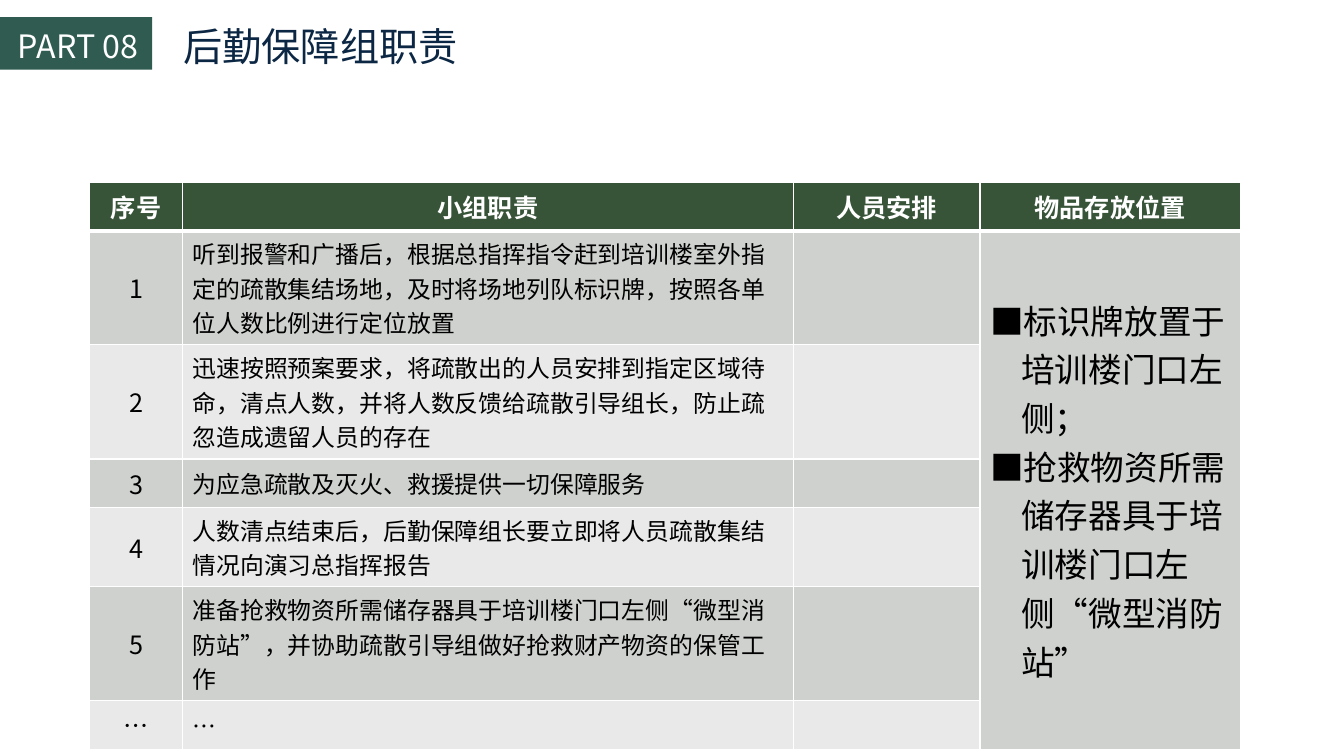
from lxml import etree
from pptx import Presentation
from pptx import util as u
from pptx.dml.color import RGBColor
from pptx.enum import shapes, text
from pptx.oxml.ns import qn

# Content
TITLE = "后勤保障组职责"
PART = "PART 08"
HEADERS = ["序号", "小组职责", "人员安排", "物品存放位置"]
DUTIES = [
    ("1", "听到报警和广播后，根据总指挥指令赶到培训楼室外指定的疏散集结场地，"
          "及时将场地列队标识牌，按照各单位人数比例进行定位放置"),
    ("2", "迅速按照预案要求，将疏散出的人员安排到指定区域待命，清点人数，"
          "并将人数反馈给疏散引导组长，防止疏忽造成遗留人员的存在"),
    ("3", "为应急疏散及灭火、救援提供一切保障服务"),
    ("4", "人数清点结束后，后勤保障组长要立即将人员疏散集结情况向演习总指挥报告"),
    ("5", "准备抢救物资所需储存器具于培训楼门口左侧“微型消防站”，"
          "并协助疏散引导组做好抢救财产物资的保管工作"),
    ("…", "…"),
]
STORAGE = ["标识牌放置于培训楼门口左侧；", "抢救物资所需储存器具于培训楼门口左侧“微型消防站”"]

# Theme and layout
THEME = {
    "font": "Noto Sans CJK SC",
    "white": "FFFFFF", "black": "000000", "navy": "0C2744", "tag": "2F5B50",
    "header": "375439", "bands": ("CED1CE", "E8E9E8"),
    "title_size": 28, "part_size": 23, "label_size": 18, "duty_size": 17, "storage_size": 24,
}
COLUMNS = [0.92, 6.06, 1.85, 2.58]
ROW_HEIGHT = 0.48
TABLE_LEFT, TABLE_TOP = 0.89, 1.81
INDENT = 0.31
THIN, THICK = 1, 3
CENTER, LEFT = text.PP_ALIGN.CENTER, text.PP_ALIGN.LEFT


def color(name):
    return RGBColor.from_string(THEME.get(name, name))


def inches(*values):
    return [u.Inches(value) for value in values]


def write(para, words, size, ink, align=LEFT, bold=False):
    para.alignment = align
    span = para.add_run()
    span.text = words
    settings = {"size": u.Pt(THEME[size]), "name": THEME["font"], "bold": bold}
    for key, value in settings.items():
        setattr(span.font, key, value)
    span.font.color.rgb = color(ink)
    props = span.font._element
    props.set("lang", "zh-CN")
    east_asian = etree.Element(qn("a:ea"), typeface=THEME["font"])
    props.find(qn("a:latin")).addnext(east_asian)


def write_line(box, words, size, ink):
    settings = {"word_wrap": False, "auto_size": text.MSO_AUTO_SIZE.NONE,
                "vertical_anchor": text.MSO_ANCHOR.MIDDLE}
    for key, value in settings.items():
        setattr(box.text_frame, key, value)
    write(box.text_frame.paragraphs[0], words, size, ink)


def add_bullet(para):
    props = para._p.get_or_add_pPr()
    props.set("marL", str(u.Inches(INDENT)))
    props.set("indent", str(-u.Inches(INDENT)))
    etree.SubElement(props, qn("a:buFont"), typeface=THEME["font"])
    etree.SubElement(props, qn("a:buChar"), char="■")


def style_cell(cell, fill, top, bottom):
    props = cell._tc.get_or_add_tcPr()
    for side, width in {"L": THIN, "R": THIN, "T": top, "B": bottom}.items():
        line = etree.SubElement(props, qn("a:ln" + side), w=str(u.Pt(width)))
        paint = etree.SubElement(line, qn("a:solidFill"))
        etree.SubElement(paint, qn("a:srgbClr"), val=THEME["white"])
    cell.fill.solid()
    cell.fill.fore_color.rgb = color(fill)
    cell.vertical_anchor = text.MSO_ANCHOR.MIDDLE


def add_duty_table(page):
    row_count = len(DUTIES) + 1
    frame = page.shapes.add_table(row_count, len(COLUMNS), *inches(
        TABLE_LEFT, TABLE_TOP, sum(COLUMNS), ROW_HEIGHT * row_count))
    table = frame.table
    for column, width in zip(table.columns, COLUMNS):
        column.width = u.Inches(width)

    # Fills and borders: header, then alternating bands
    for index, row in enumerate(table.rows):
        row.height = u.Inches(ROW_HEIGHT)
        fill = THEME["bands"][(index - 1) % 2] if index else "header"
        for cell in row.cells:
            style_cell(cell, fill, THICK if index == 1 else THIN, THICK if index == 0 else THIN)

    # Header and duties
    for cell, words in zip(table.rows[0].cells, HEADERS):
        write(cell.text_frame.paragraphs[0], words, "label_size", "white", CENTER, True)
    for index, (number, duty) in enumerate(DUTIES, 1):
        write(table.cell(index, 0).text_frame.paragraphs[0], number, "label_size", "black", CENTER)
        write(table.cell(index, 1).text_frame.paragraphs[0], duty, "duty_size", "black")

    # Storage places share one tall cell
    last = len(COLUMNS) - 1
    storage = table.cell(1, last)
    storage.merge(table.cell(row_count - 1, last))
    for index, words in enumerate(STORAGE):
        body = storage.text_frame
        para = body.add_paragraph() if index else body.paragraphs[0]
        add_bullet(para)
        write(para, words, "storage_size", "black")


def main():
    deck = Presentation()
    deck.slide_width, deck.slide_height = inches(13.33, 7.5)
    page = deck.slides.add_slide(deck.slide_layouts[5])

    add_duty_table(page)

    # Title
    title = page.shapes.title
    title.left, title.top, title.width, title.height = inches(1.72, 0.17, 2.94, 0.57)
    write_line(title, TITLE, "title_size", "navy")

    # Part tag
    tag = page.shapes.add_shape(shapes.MSO_SHAPE.RECTANGLE, *inches(0, 0.17, 1.51, 0.52))
    tag.shadow.inherit = False
    tag.fill.solid()
    tag.fill.fore_color.rgb = color("tag")
    tag.line.fill.background()
    label = page.shapes.add_textbox(*inches(0.08, 0.21, 1.45, 0.48))
    write_line(label, PART, "part_size", "white")

    deck.save("out.pptx")


if __name__ == "__main__":
    main()
